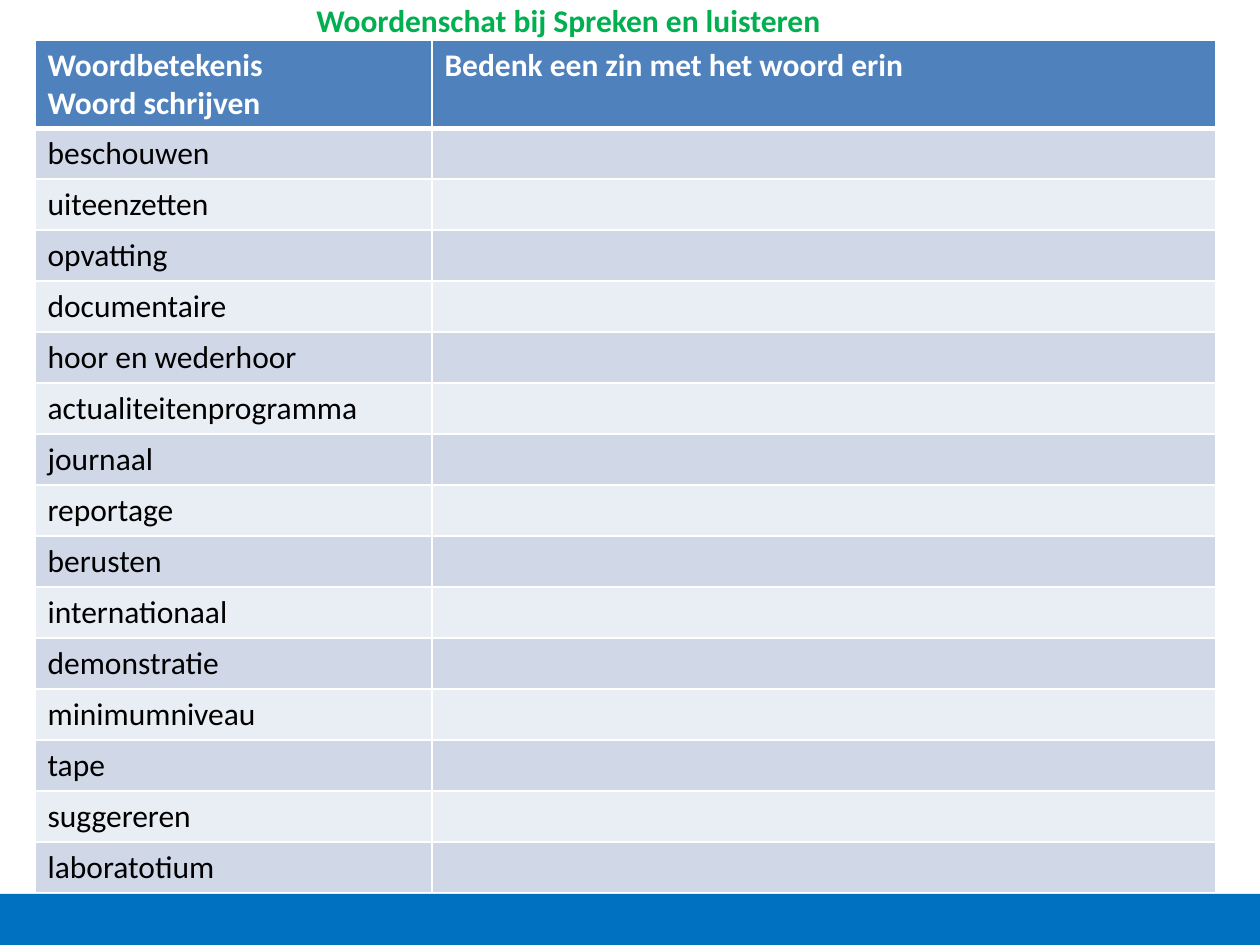
from lxml.etree import SubElement
from pptx import Presentation
from pptx.dml.color import RGBColor as Color
from pptx.enum.shapes import MSO_SHAPE as Preset
from pptx.oxml.ns import qn
from pptx.util import Emu, Inches, Pt

WHITE = Color(0xFF, 0xFF, 0xFF)
BLACK = Color(0x00, 0x00, 0x00)
GREEN = Color(0x00, 0xB0, 0x50)
HEADER_BLUE = Color(0x4F, 0x81, 0xBD)
DARK_BAND = Color(0xD0, 0xD8, 0xE8)
LIGHT_BAND = Color(0xE9, 0xED, 0xF4)
FOOTER_BLUE = Color(0x00, 0x70, 0xC0)

WIDTH, HEIGHT = 1260, 945
HEADER_HEIGHT, ROW_HEIGHT = 88, 51
COLUMN_WIDTHS = (397, 784)
HEADERS = ("Woordbetekenis\nWoord schrijven", "Bedenk een zin met het woord erin")
WORDS = (
    "beschouwen", "uiteenzetten", "opvatting", "documentaire",
    "hoor en wederhoor", "actualiteitenprogramma", "journaal", "reportage",
    "berusten", "internationaal", "demonstratie", "minimumniveau",
    "tape", "suggereren", "laboratotium",
)


def px(length):
    return Emu(round(length * Inches(1) / 126))


class SlideBuilder:
    font_name = "Calibri"
    font_size = Pt(18)

    def __init__(self, slide):
        self.slide = slide

    def set_text(self, text_frame, text, color, bold):
        text_frame.text = text
        for paragraph in text_frame.paragraphs:
            font = paragraph.font
            font.name, font.size, font.bold = self.font_name, self.font_size, bold
            font.color.rgb = color

    def title(self, left, top, width, height, text):
        shape = self.slide.shapes.add_textbox(*map(px, (left, top, width, height)))
        shape.text_frame.word_wrap = True
        self.set_text(shape.text_frame, text, GREEN, True)

    def bar(self, left, top, width, height, color):
        shape = self.slide.shapes.add_shape(
            Preset.RECTANGLE, *map(px, (left, top, width, height)))
        shape.shadow.inherit = False
        shape.fill.solid()
        shape.fill.fore_color.rgb = color
        shape.line.fill.background()

    def borders(self, cell, bottom):
        properties = cell._tc.get_or_add_tcPr()
        widths = {"a:lnL": 1, "a:lnR": 1, "a:lnT": 1, "a:lnB": bottom}
        for index, (tag, width) in enumerate(widths.items()):
            line = SubElement(properties, qn(tag), w=str(Pt(width)))
            fill = SubElement(line, qn("a:solidFill"))
            SubElement(fill, qn("a:srgbClr"), val=str(WHITE))
            properties.insert(index, line)

    def cell(self, cell, text, fill, color, header):
        self.set_text(cell.text_frame, text, color, header)
        cell.fill.solid()
        cell.fill.fore_color.rgb = fill
        self.borders(cell, 3 if header else 1)

    def table(self, left, top, headers, words):
        rows = [headers] + [(word, "") for word in words]
        height = HEADER_HEIGHT + ROW_HEIGHT * len(words)
        table = self.slide.shapes.add_table(
            len(rows), len(headers),
            *map(px, (left, top, sum(COLUMN_WIDTHS), height))).table
        for column, width in zip(table.columns, COLUMN_WIDTHS):
            column.width = px(width)
        for row_index, texts in enumerate(rows):
            header = row_index == 0
            table.rows[row_index].height = px(HEADER_HEIGHT if header else ROW_HEIGHT)
            band = DARK_BAND if row_index % 2 else LIGHT_BAND
            fill, color = (HEADER_BLUE, WHITE) if header else (band, BLACK)
            for column_index, text in enumerate(texts):
                self.cell(table.cell(row_index, column_index), text, fill, color, header)


def main():
    presentation = Presentation()
    presentation.slide_width, presentation.slide_height = px(WIDTH), px(HEIGHT)
    builder = SlideBuilder(presentation.slides.add_slide(presentation.slide_layouts[6]))
    builder.title(304, -5, 743, 50, "Woordenschat bij Spreken en luisteren")
    builder.table(35, 40, HEADERS, WORDS)
    builder.bar(0, 894, WIDTH, HEIGHT - 894, FOOTER_BLUE)
    presentation.save("out.pptx")


if __name__ == "__main__":
    main()
